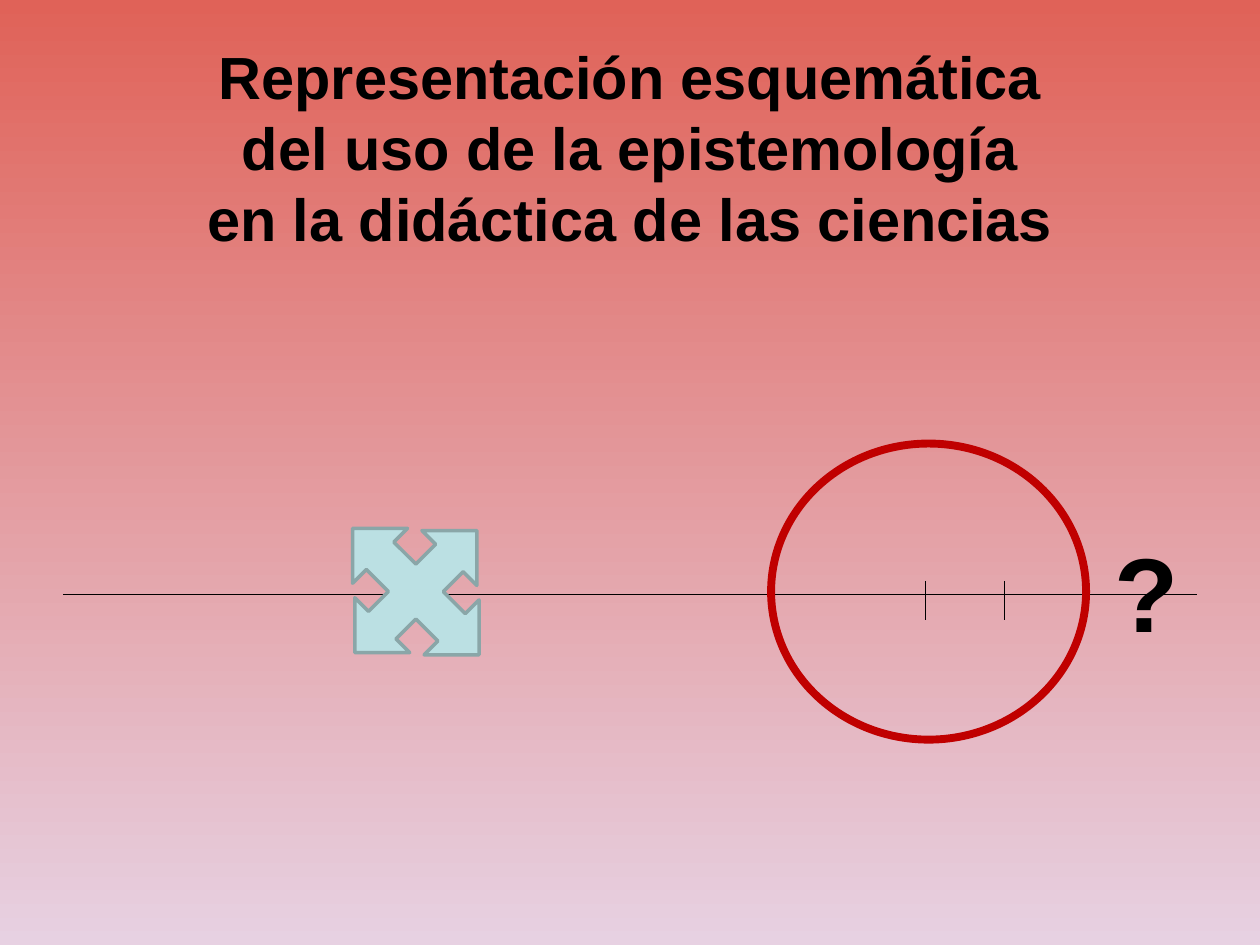
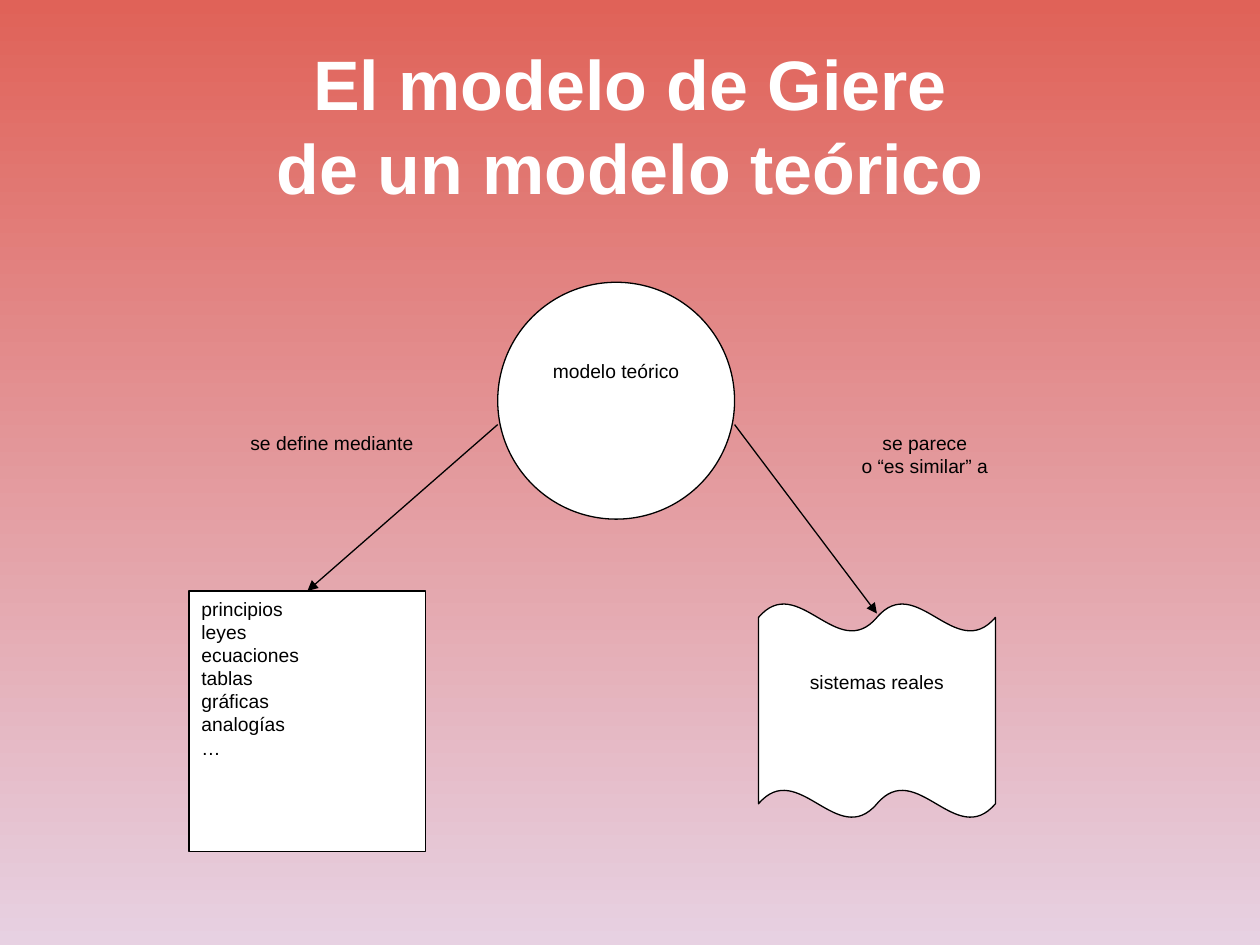
from lxml import etree
from pptx import Presentation
from pptx.dml.color import RGBColor
from pptx.enum.shapes import MSO_CONNECTOR, MSO_SHAPE
from pptx.enum.text import MSO_ANCHOR, MSO_AUTO_SIZE, PP_ALIGN
from pptx.oxml.ns import qn
from pptx.util import Inches, Pt

STRAIGHT = MSO_CONNECTOR.STRAIGHT
ELLIPSE, RECTANGLE = MSO_SHAPE.OVAL, MSO_SHAPE.RECTANGLE
CROSS_ARROWS, WAVY_SHEET = MSO_SHAPE.QUAD_ARROW, MSO_SHAPE.DOUBLE_WAVE
TOP, MIDDLE = MSO_ANCHOR.TOP, MSO_ANCHOR.MIDDLE
LEFT, CENTER = PP_ALIGN.LEFT, PP_ALIGN.CENTER
NO_FIT, GROW = MSO_AUTO_SIZE.NONE, MSO_AUTO_SIZE.SHAPE_TO_FIT_TEXT

BLACK = RGBColor(0x00, 0x00, 0x00)
WHITE = RGBColor(0xFF, 0xFF, 0xFF)
SKY_RED = RGBColor(0xE0, 0x62, 0x58)
GROUND_LILAC = RGBColor(0xE7, 0xD1, 0xE2)
PALE_TEAL = RGBColor(0xBB, 0xE0, 0xE3)
TEAL_EDGE = RGBColor(0x8A, 0xA6, 0xA8)
DARK_RED = RGBColor(0xC0, 0x00, 0x00)

FONT = "Arial"
WIDTH, HEIGHT = 10, 7.5
MARGIN = 0.05 * WIDTH
THIN = 0.75
LABEL_SIZE = 11
NODE_WIDTH = 1.88
LABEL_HEIGHT = 0.75


def set_background(master):
    fill = master.background.fill
    fill.gradient()
    fill.gradient_angle = 270
    for stop, color in zip(fill.gradient_stops, (SKY_RED, GROUND_LILAC)):
        stop.color.rgb = color


def add_run(paragraph, text, size, color, bold=False):
    run = paragraph.add_run()
    run.text = text
    run.font.name = FONT
    run.font.size = Pt(size)
    run.font.bold = bold
    run.font.color.rgb = color


def write_lines(frame, lines, size=LABEL_SIZE, align=CENTER, bold=False):
    frame.vertical_anchor = TOP
    for index, line in enumerate(lines):
        paragraph = frame.add_paragraph() if index else frame.paragraphs[0]
        paragraph.alignment = align
        add_run(paragraph, line, size, BLACK, bold)


def add_titled_slide(prs, lines, top, height, size, color):
    slide = prs.slides.add_slide(prs.slide_layouts[5])
    title = slide.shapes.title
    title.left, title.top = Inches(MARGIN), Inches(top)
    title.width, title.height = Inches(WIDTH - 2 * MARGIN), Inches(height)
    frame = title.text_frame
    frame.auto_size = NO_FIT
    frame.vertical_anchor = MIDDLE
    paragraph = frame.paragraphs[0]
    paragraph.alignment = CENTER
    for index, line in enumerate(lines):
        if index:
            paragraph.add_line_break()
        add_run(paragraph, line, size, color, True)
    return slide


def add_label(slide, lines, box, **style):
    label = slide.shapes.add_textbox(*map(Inches, box))
    label.text_frame.word_wrap = True
    write_lines(label.text_frame, lines, **style)
    return label


def add_figure(slide, preset, box, fill=WHITE, edge=BLACK, weight=THIN):
    figure = slide.shapes.add_shape(preset, *map(Inches, box))
    figure.shadow.inherit = False
    if fill is None:
        figure.fill.background()
    else:
        figure.fill.solid()
        figure.fill.fore_color.rgb = fill
    figure.line.color.rgb = edge
    figure.line.width = Pt(weight)
    return figure


def add_line(slide, start, end, arrow=False):
    line = slide.shapes.add_connector(STRAIGHT, *map(Inches, (*start, *end)))
    line.line.color.rgb = BLACK
    line.line.width = Pt(THIN)
    if arrow:
        etree.SubElement(line.line._get_or_add_ln(), qn("a:tailEnd"), type="triangle")
    etree.SubElement(line._element.spPr, qn("a:effectLst"))


def build_scheme(prs):
    slide = add_titled_slide(
        prs,
        ["Representación esquemática", "del uso de la epistemología",
         "en la didáctica de las ciencias"],
        top=0.04 * HEIGHT, height=1.73, size=34, color=BLACK)
    axis_y = 4.72
    add_line(slide, (MARGIN, axis_y), (WIDTH - MARGIN, axis_y))
    for tick_x in (7.345, 7.97):
        add_line(slide, (tick_x, axis_y - 0.11), (tick_x, axis_y + 0.2))
    crossing = add_figure(slide, CROSS_ARROWS, (2.59, 4.01, 1.42, 1.37),
                          PALE_TEAL, TEAL_EDGE, 2)
    crossing.rotation = 45
    add_figure(slide, ELLIPSE, (6.12, 3.52, 2.5, 2.35), None, DARK_RED, 4.5)
    question = add_label(slide, ["?"], (8.75, 4.14, 0.42, 1.11),
                         size=60, align=LEFT, bold=True)
    question.text_frame.word_wrap = False
    question.text_frame.auto_size = GROW


def build_model(prs):
    slide = add_titled_slide(
        prs, ["El modelo de Giere", "de un modelo teórico"],
        top=0.21, height=1.56, size=40, color=WHITE)
    model_x, means_x, systems_x = 3.95, 1.5, 6.02
    relation_y, means_y = 3.37, 4.69

    add_label(slide, ["se parece", "o “es similar” a"],
              (6.4, relation_y, NODE_WIDTH, LABEL_HEIGHT))
    add_label(slide, ["se define mediante"], (1.88, relation_y, 1.51, LABEL_HEIGHT))

    add_figure(slide, ELLIPSE, (model_x, 2.24, NODE_WIDTH, NODE_WIDTH))
    add_label(slide, ["modelo teórico"], (model_x, 2.8, NODE_WIDTH, 1.13))

    means = add_figure(slide, RECTANGLE, (means_x, means_y, NODE_WIDTH, 2.07))
    write_lines(means.text_frame,
                ["principios", "leyes", "ecuaciones", "tablas", "gráficas",
                 "analogías", "…"], align=LEFT)
    add_line(slide, (model_x, relation_y),
             (means_x + NODE_WIDTH / 2, means_y), arrow=True)

    systems = add_figure(slide, WAVY_SHEET, (systems_x, 4.79, NODE_WIDTH, 1.7))
    systems.adjustments[0] = 0.065
    systems.adjustments[1] = 0
    add_line(slide, (model_x + NODE_WIDTH, relation_y),
             (systems_x + NODE_WIDTH / 2, 4.87), arrow=True)
    add_label(slide, ["sistemas reales"],
              (systems_x, 5.27, NODE_WIDTH, LABEL_HEIGHT))


def main():
    prs = Presentation()
    prs.slide_width, prs.slide_height = Inches(WIDTH), Inches(HEIGHT)
    set_background(prs.slide_master)
    build_scheme(prs)
    build_model(prs)
    prs.save("out.pptx")


if __name__ == "__main__":
    main()
